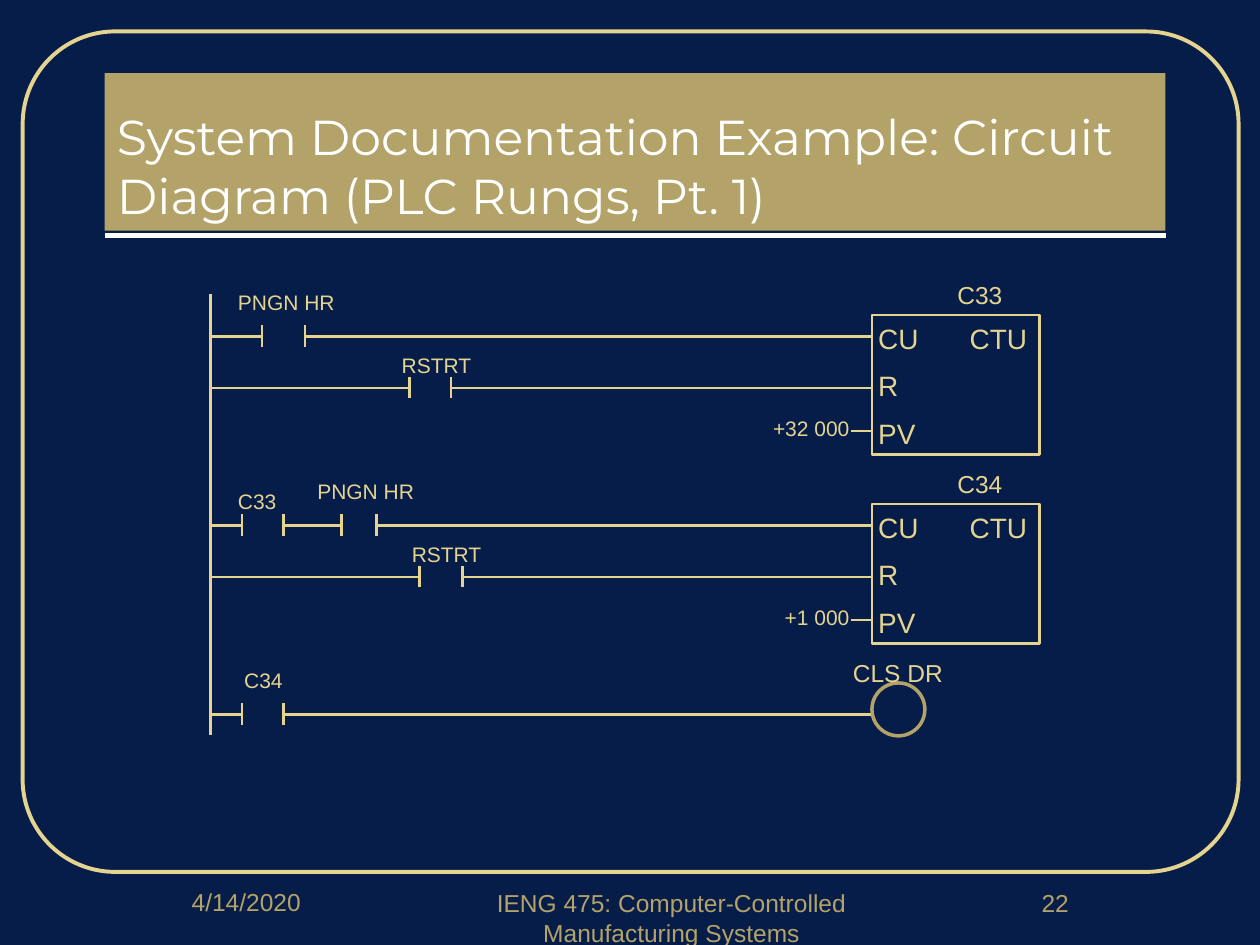
from pptx import Presentation
from pptx.dml.color import RGBColor
from pptx.enum.shapes import MSO_CONNECTOR, MSO_SHAPE
from pptx.enum.text import MSO_ANCHOR, PP_ALIGN
from pptx.oxml.ns import qn
from pptx.util import Inches, Pt
from lxml.etree import SubElement

NAVY = RGBColor(0x07, 0x1D, 0x49)
GOLD = RGBColor(0xB3, 0xA3, 0x69)
CREAM = RGBColor(0xE4, 0xD4, 0x90)
WHITE = RGBColor(0xFF, 0xFF, 0xFF)

LEFT, RIGHT, CENTER = PP_ALIGN.LEFT, PP_ALIGN.RIGHT, PP_ALIGN.CENTER


def write(shape, lines, size, color=CREAM, font="Arial", align=LEFT, gap=0, **frame):
    """Fill a shape with paragraphs; frame holds text frame settings."""
    tf = shape.text_frame
    for name, value in ({"word_wrap": True} | frame).items():
        setattr(tf, name, value)
    tf.text = "\n".join(lines)
    for i, par in enumerate(tf.paragraphs):
        par.alignment = align
        par.space_before = Pt(gap if i else 0)
        look = {"size": Pt(size), "name": font}
        for name, value in look.items():
            setattr(par.runs[0].font, name, value)
        par.runs[0].font.color.rgb = color


def label(slide, x, y, w, h, text, size, color=CREAM, align=LEFT):
    box = slide.shapes.add_textbox(Inches(x), Inches(y), Inches(w), Inches(h))
    write(box, [text], size, color, align=align)


def wire(slide, x1, y1, x2, y2, color=CREAM, width=1.5):
    line = slide.shapes.add_connector(
        MSO_CONNECTOR.STRAIGHT, Inches(x1), Inches(y1), Inches(x2), Inches(y2))
    line.line.color.rgb = color
    line.line.width = Pt(width)
    SubElement(line._element.spPr, qn("a:effectLst"))


def block(slide, kind, x, y, w, h, fill=None, line=None, width=1.5):
    shape = slide.shapes.add_shape(kind, Inches(x), Inches(y), Inches(w), Inches(h))
    shape.shadow.inherit = False
    if fill is None:
        shape.fill.background()
    else:
        shape.fill.solid()
        shape.fill.fore_color.rgb = fill
    if line is None:
        shape.line.fill.background()
    else:
        shape.line.color.rgb = line
        shape.line.width = Pt(width)
    return shape


def border(slide, x, y, w, h):
    frame = block(slide, MSO_SHAPE.ROUNDED_RECTANGLE, x, y, w, h, line=CREAM, width=2.25)
    frame.adjustments[0] = 0.11


def header(slide, x, y, w, h, text):
    band = block(slide, MSO_SHAPE.RECTANGLE, x, y, w, h, fill=GOLD)
    write(band, [text], 28, WHITE, "Montserrat", vertical_anchor=MSO_ANCHOR.BOTTOM)
    wire(slide, x, y + h + 0.04, x + w, y + h + 0.04, WHITE, 3)


def footer(slide, x, y, h):
    parts = [
        (0, -0.01, 2.25, "4/14/2020"),
        (2.75, 0, 3.5, "IENG 475: Computer-Controlled Manufacturing Systems"),
        (6.67, 0, 1.75, "22"),
    ]
    for dx, dy, w, text in parts:
        label(slide, x + dx, y + dy, w, h, text, 14, GOLD, CENTER)


def rung(slide, x, y, end, contacts):
    """Wire from x to end, broken by contacts: (start, stop, name, label dx, rise)."""
    for start, stop, name, dx, rise in contacts:
        wire(slide, x, y, start, y)
        for bar in (start, stop):
            wire(slide, bar, y + 0.08, bar, y - 0.09)
        label(slide, start + dx, y - rise, 1.1, 0.3, name, 12)
        x = stop
    wire(slide, x, y, end, y)


def counter(slide, x, y, w, h, name, preset):
    """Count-up block with its preset value."""
    box = block(slide, MSO_SHAPE.RECTANGLE, x, y, w, h, line=CREAM)
    inset = dict.fromkeys(
        ("margin_left", "margin_right", "margin_top", "margin_bottom"), Inches(0.05))
    write(box, ["CU", "R", "PV"], 16, gap=8, vertical_anchor=MSO_ANCHOR.TOP, **inset)
    label(slide, x + 0.5, y, w - 0.5, 0.37, "CTU", 16, align=RIGHT)
    label(slide, x + 0.58, y - 0.33, 0.83, 0.34, name, 14)
    label(slide, x - 1, y + 0.75, 0.92, 0.3, preset, 12, align=RIGHT)
    wire(slide, x - 0.17, y + 0.92, x, y + 0.92)


def coil(slide, x, y, size, name):
    block(slide, MSO_SHAPE.OVAL, x, y, size, size, line=GOLD, width=2)
    label(slide, x - 0.25, y - 0.25, 1.08, 0.34, name, 14)


def ladder(slide, x, y, w, h):
    """Power rail, two counter groups and the output coil."""
    end, pitch = x + w, 1.5
    wire(slide, x, y, x, y + h)
    groups = [
        ("C33", "+32 000",
         [(0.41, 0.75, "PNGN HR", -0.29, 0.42)],
         [(1.58, 1.91, "RSTRT", -0.16, 0.33)]),
        ("C34", "+1 000",
         [(0.25, 0.58, "C33", -0.13, 0.34), (1.04, 1.32, "PNGN HR", -0.29, 0.42)],
         [(1.66, 2, "RSTRT", -0.16, 0.33)]),
    ]

    def place(contacts):
        return [(x + a, x + b, *rest) for a, b, *rest in contacts]

    for i, (name, preset, count, reset) in enumerate(groups):
        top = y + 0.17 + i * pitch
        rung(slide, x, top + 0.17, end, place(count))
        rung(slide, x, top + 0.58, end, place(reset))
        counter(slide, end, top, 1.33, 1.11, name, preset)

    top = y + 0.17 + len(groups) * pitch
    rung(slide, x, top + 0.17, end, place([(0.25, 0.58, "C34", -0.08, 0.42)]))
    coil(slide, end, top - 0.08, 0.42, "CLS DR")


def main():
    prs = Presentation()
    prs.slide_width, prs.slide_height = Inches(10), Inches(7.5)
    slide = prs.slides.add_slide(prs.slide_layouts[6])
    slide.background.fill.solid()
    slide.background.fill.fore_color.rgb = NAVY

    border(slide, 0.18, 0.25, 9.65, 6.67)
    header(slide, 0.83, 0.58, 8.42, 1.25,
           "System Documentation Example: Circuit Diagram (PLC Rungs, Pt. 1)")
    ladder(slide, 1.67, 2.33, 5.25, 3.5)
    footer(slide, 0.83, 7, 0.5)
    prs.save("out.pptx")


if __name__ == "__main__":
    main()
